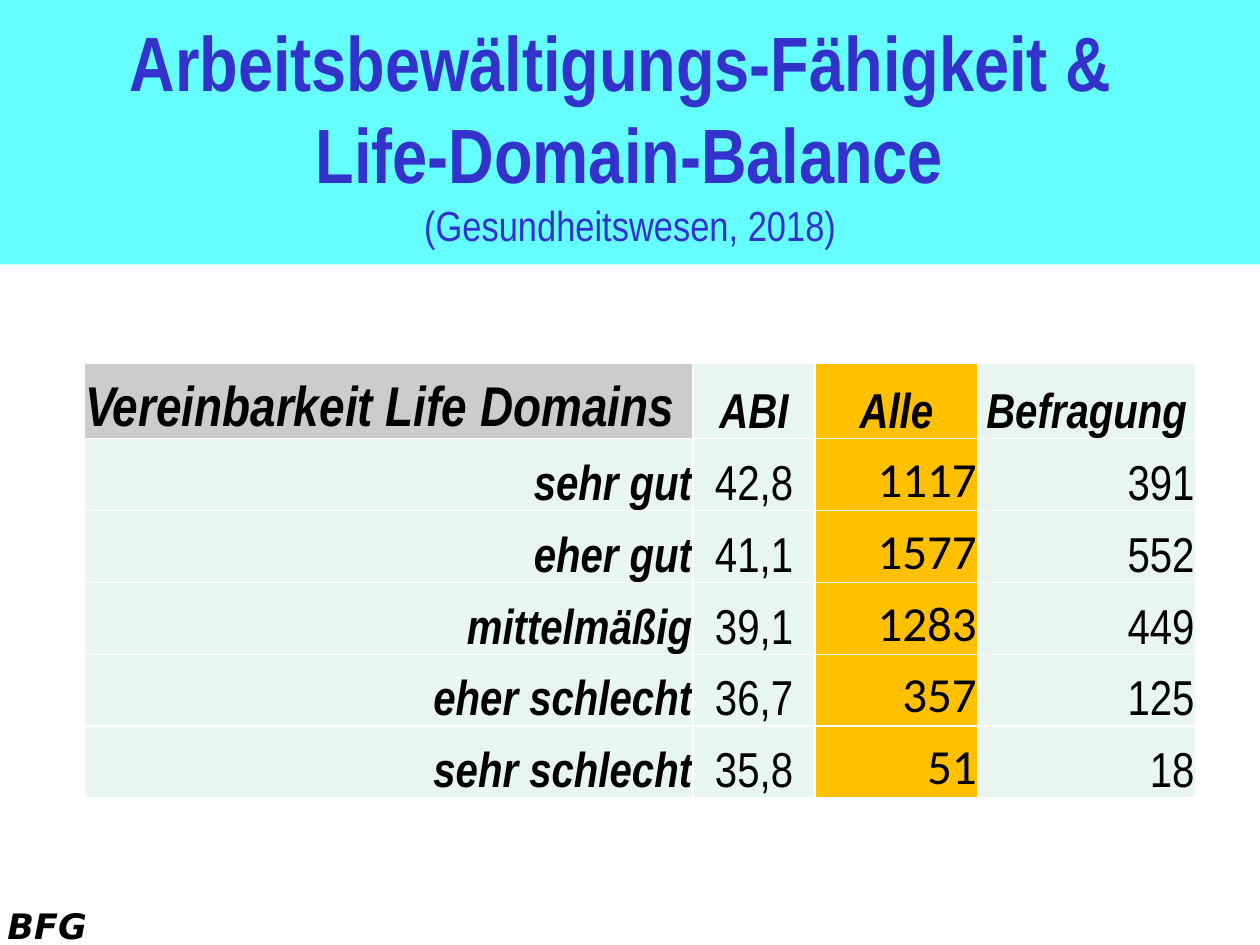
from dataclasses import dataclass
from lxml.etree import SubElement as Sub
from pptx import Presentation
from pptx.dml.color import RGBColor as Rgb
from pptx.enum.text import MSO_ANCHOR as Anchor, MSO_AUTO_SIZE as Auto, PP_ALIGN as Align
from pptx.oxml.ns import qn
from pptx.util import Cm, Pt


@dataclass(frozen=True)
class Theme:
    cyan: str = "66FFFF"
    blue: str = "3333CC"
    black: str = "000000"
    white: str = "FFFFFF"
    grey: str = "CCCCCC"
    mint: str = "E7F6EF"
    gold: str = "FFC000"
    narrow: str = "Arial Narrow"
    round: str = "Calibri"
    wide: str = "DejaVu Sans"
    title: int = 44
    sub: int = 24
    head: int = 32
    body: int = 28
    mark: int = 20


T = Theme()
HEADS = ["Vereinbarkeit Life Domains", "ABI", "Alle", "Befragung"]
ROWS = [
    ["sehr gut", "42,8", "1117", "391"],
    ["eher gut", "41,1", "1577", "552"],
    ["mittelmäßig", "39,1", "1283", "449"],
    ["eher schlecht", "36,7", "357", "125"],
    ["sehr schlecht", "35,8", "51", "18"],
]
WIDTHS = [12.27, 2.46, 3.28, 4.39]
HEAD_HIGH, ROW_HIGH = 1.52, 1.45


def style(run, size, face=T.narrow, color=T.black, bold=False, slant=False):
    font = run.font
    font.size, font.name = Pt(size), face
    font.bold, font.italic = bold, slant
    font.color.rgb = Rgb.from_string(color)


def paint(fill, color):
    fill.solid()
    fill.fore_color.rgb = Rgb.from_string(color)


def add_title(slide):
    title = slide.shapes.title
    title.left, title.top, title.width, title.height = Cm(0), Cm(0), Cm(25.4), Cm(5.33)
    paint(title.fill, T.cyan)
    frame = title.text_frame
    frame.text = "Arbeitsbewältigungs-Fähigkeit & \vLife-Domain-Balance\v(Gesundheitswesen, 2018)"
    frame.auto_size = Auto.NONE
    frame.vertical_anchor = Anchor.MIDDLE
    para = frame.paragraphs[0]
    para.alignment = Align.CENTER
    *main_runs, sub_run = para.runs
    for run in main_runs:
        style(run, T.title, color=T.blue, bold=True)
    style(sub_run, T.sub, color=T.blue)


def add_edges(cell):
    props = cell._tc.get_or_add_tcPr()
    for side in ("lnL", "lnR", "lnT", "lnB"):
        line = Sub(props, qn(f"a:{side}"), w=str(Pt(1)))
        Sub(Sub(line, qn("a:solidFill")), qn("a:srgbClr"), val=T.white)


def fill_cell(cell, text, row, col):
    head, label = row == 0, col == 0
    corner = head and label
    add_edges(cell)
    paint(cell.fill, T.grey if corner else T.gold if col == 2 else T.mint)
    cell.margin_left = cell.margin_right = cell.margin_top = Cm(0.02)
    cell.margin_bottom = Cm(0)
    cell.vertical_anchor = Anchor.BOTTOM
    cell.text_frame.text = text
    para = cell.text_frame.paragraphs[0]
    if corner:
        para.alignment = Align.LEFT
    else:
        para.alignment = Align.CENTER if head or col == 1 else Align.RIGHT
    face = T.round if col == 2 and not head else T.narrow
    strong = head or label
    style(para.runs[0], T.head if corner else T.body, face, bold=strong, slant=strong)


def add_grid(slide):
    data = [HEADS] + ROWS
    high = HEAD_HIGH + ROW_HIGH * len(ROWS)
    grid = slide.shapes.add_table(
        len(data), len(HEADS), Cm(1.7), Cm(7.32), Cm(sum(WIDTHS)), Cm(high)
    ).table
    for col, wide in zip(grid.columns, WIDTHS):
        col.width = Cm(wide)
    for row, line in enumerate(data):
        grid.rows[row].height = Cm(ROW_HIGH if row else HEAD_HIGH)
        for col, text in enumerate(line):
            fill_cell(grid.cell(row, col), text, row, col)


def add_mark(slide):
    box = slide.shapes.add_textbox(Cm(-0.1), Cm(18.11), Cm(4.09), Cm(1.09))
    frame = box.text_frame
    frame.word_wrap = True
    frame.text = "BFG"
    style(frame.paragraphs[0].runs[0], T.mark, T.wide, bold=True, slant=True)


def main():
    deck = Presentation()
    deck.slide_width, deck.slide_height = Cm(25.4), Cm(19.05)
    slide = deck.slides.add_slide(deck.slide_layouts[5])
    paint(slide.background.fill, T.white)
    add_mark(slide)
    add_title(slide)
    add_grid(slide)
    deck.save("out.pptx")


if __name__ == "__main__":
    main()
